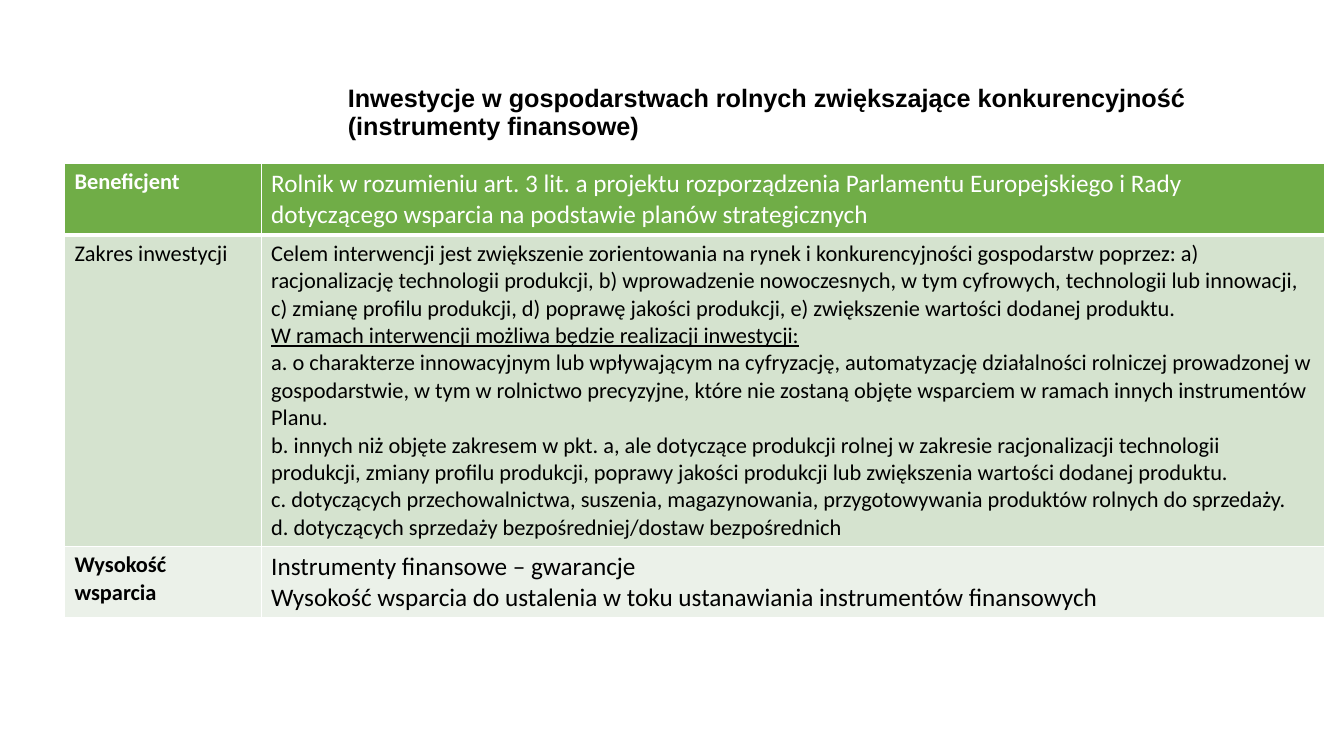
import pptx
import pptx.dml.color
import pptx.enum.text
import pptx.oxml
import pptx.oxml.ns
import pptx.util

PX = 9144  # 100 px to the inch
WHITE, BLACK = "FFFFFF", "000000"

TITLE = "Inwestycje w gospodarstwach rolnych zwiększające konkurencyjność (instrumenty finansowe)"
SCOPE = [
    "Celem interwencji jest zwiększenie zorientowania na rynek i konkurencyjności gospodarstw poprzez: "
    "a) racjonalizację technologii produkcji, b) wprowadzenie nowoczesnych, w tym cyfrowych, technologii "
    "lub innowacji, c) zmianę profilu produkcji, d) poprawę jakości produkcji, "
    "e) zwiększenie wartości dodanej produktu.",
    "W ramach interwencji możliwa będzie realizacji inwestycji:",
    "a. o charakterze innowacyjnym lub wpływającym na cyfryzację, automatyzację działalności rolniczej "
    "prowadzonej w gospodarstwie, w tym w rolnictwo precyzyjne, które nie zostaną objęte wsparciem "
    "w ramach innych instrumentów Planu.",
    "b. innych niż objęte zakresem w pkt. a, ale dotyczące produkcji rolnej w zakresie racjonalizacji "
    "technologii produkcji, zmiany profilu produkcji, poprawy jakości produkcji lub zwiększenia "
    "wartości dodanej produktu.",
    "c. dotyczących przechowalnictwa, suszenia, magazynowania, przygotowywania produktów rolnych do sprzedaży.",
    "d. dotyczących sprzedaży bezpośredniej/dostaw bezpośrednich",
]
UNDERLINED = SCOPE[1]

# Each row: height, fill, text colour, label, label bold, details, details size
ROWS = [
    (71, "70AD47", WHITE, "Beneficjent", True,
     ["Rolnik w rozumieniu art. 3 lit. a projektu rozporządzenia Parlamentu Europejskiego i Rady "
      "dotyczącego wsparcia na podstawie planów strategicznych"], 18),
    (308, "D5E3CF", BLACK, "Zakres inwestycji", False, SCOPE, 16),
    (71, "EBF1E9", BLACK, "Wysokość wsparcia", True,
     ["Instrumenty finansowe – gwarancje",
      "Wysokość wsparcia do ustalenia w toku ustanawiania instrumentów finansowych"], 18),
]


def px(length):
    return pptx.util.Emu(length * PX)


def colour(code):
    return pptx.dml.color.RGBColor.from_string(code)


def style(target, formats):
    for name, value in formats.items():
        setattr(target, name, value)


def write(frame, lines, ink, font, **para_formats):
    """Write one paragraph a line, all in the same font."""
    for index, line in enumerate(lines):
        para = frame.paragraphs[0] if index == 0 else frame.add_paragraph()
        style(para, {"alignment": pptx.enum.text.PP_ALIGN.LEFT, **para_formats})
        span = para.add_run()
        span.text = line
        style(span.font, {**font, "underline": line == UNDERLINED})
        span.font.color.rgb = colour(ink)


def add_borders(cell, widths):
    properties = cell._tc.get_or_add_tcPr()
    for index, (side, width) in enumerate(widths.items()):
        border = pptx.oxml.parse_xml(
            f'<a:ln{side} {pptx.oxml.ns.nsdecls("a")} w="{pptx.util.Pt(width)}">'
            f'<a:solidFill><a:srgbClr val="{WHITE}"/></a:solidFill></a:ln{side}>')
        properties.insert(index, border)


def add_title(page, left, top, width, height):
    title = page.shapes.title
    style(title, {"left": px(left), "top": px(top), "width": px(width), "height": px(height)})
    style(title.text_frame, {"word_wrap": True,
                             "auto_size": pptx.enum.text.MSO_AUTO_SIZE.NONE,
                             "vertical_anchor": pptx.enum.text.MSO_ANCHOR.MIDDLE})
    write(title.text_frame, [TITLE], BLACK,
          {"name": "Arial", "size": pptx.util.Pt(18), "bold": True}, line_spacing=0.9)


def add_support_table(page, left, top, label_width, details_width):
    height = sum(row[0] for row in ROWS)
    table = page.shapes.add_table(len(ROWS), 2, px(left), px(top),
                                  px(label_width + details_width), px(height)).table
    style(table, {"first_row": False, "horz_banding": False})
    for column, width in zip(table.columns, (label_width, details_width)):
        column.width = px(width)

    for index, (height, fill, ink, label, bold, details, size) in enumerate(ROWS):
        table.rows[index].height = px(height)
        # Thick rule between the header row and the rest
        widths = {"L": 1, "R": 1, "T": 3 if index == 1 else 1, "B": 3 if index == 0 else 1}
        contents = (([label], 16, bold), (details, size, False))
        for cell, (lines, points, heavy) in zip(table.rows[index].cells, contents):
            cell.fill.solid()
            cell.fill.fore_color.rgb = colour(fill)
            add_borders(cell, widths)
            write(cell.text_frame, lines, ink,
                  {"name": "Calibri", "size": pptx.util.Pt(points), "bold": heavy})


def main():
    deck = pptx.Presentation()
    style(deck, {"slide_width": px(1333), "slide_height": px(750)})
    page = deck.slides.add_slide(deck.slide_layouts[5])
    add_title(page, 335, 40, 946, 145)
    add_support_table(page, 64, 162, 195, 1055)
    deck.save("out.pptx")


if __name__ == "__main__":
    main()
